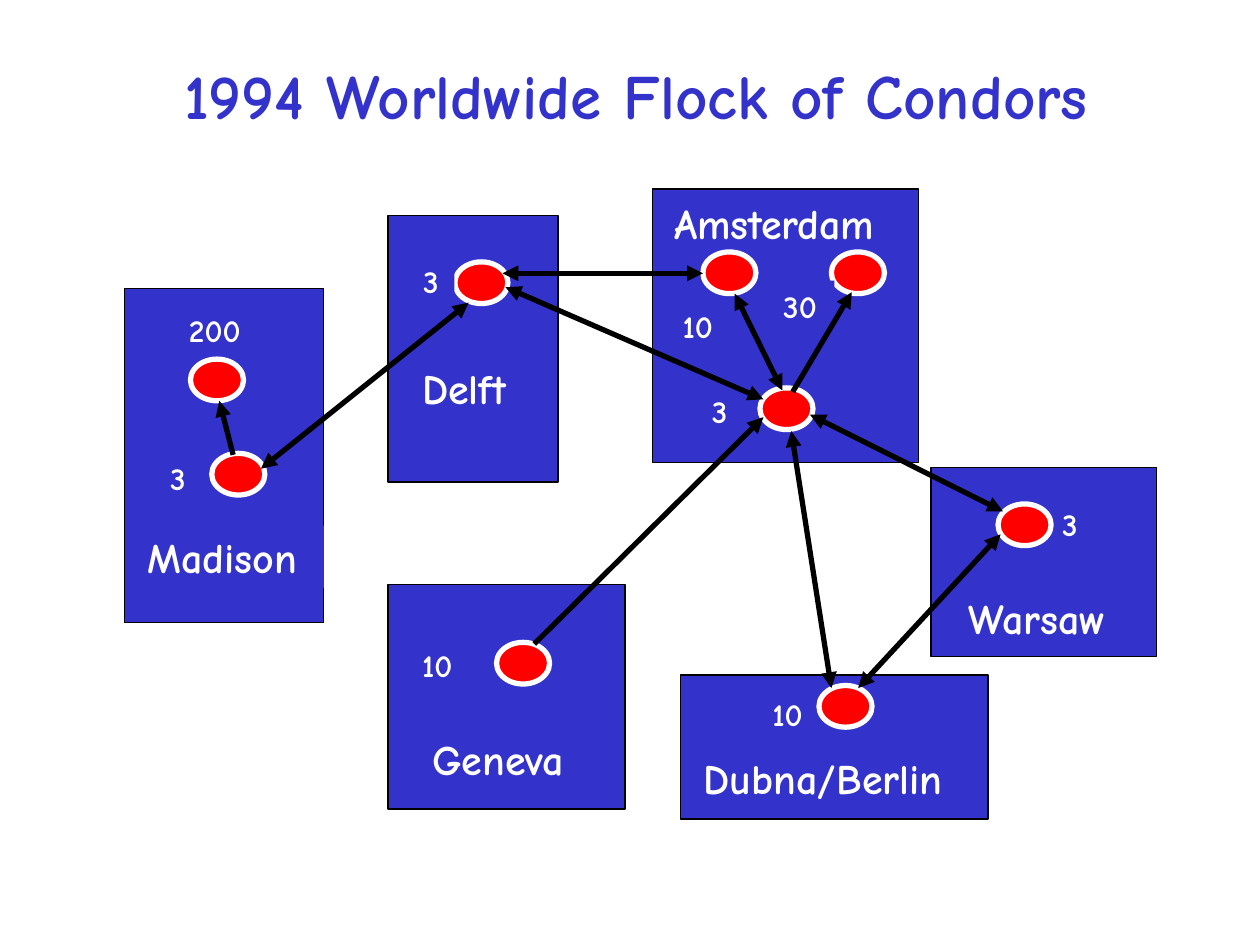
"""Build a slide mapping the 1994 worldwide flock of Condor pools."""
from dataclasses import dataclass

from lxml import etree
from pptx import Presentation
from pptx.dml.color import RGBColor
from pptx.enum.shapes import MSO_CONNECTOR, MSO_SHAPE
from pptx.enum.text import MSO_ANCHOR, PP_ALIGN
from pptx.oxml.ns import qn
from pptx.util import Cm, Pt

RECT, OVAL = MSO_SHAPE.RECTANGLE, MSO_SHAPE.OVAL
STRAIGHT = MSO_CONNECTOR.STRAIGHT
CENTER, MIDDLE = PP_ALIGN.CENTER, MSO_ANCHOR.MIDDLE
TITLE_ONLY = 5


@dataclass(frozen=True)
class Theme:
    font: str = "Comic Neue"
    blue: RGBColor = RGBColor(0x33, 0x33, 0xCC)
    red: RGBColor = RGBColor(0xFF, 0, 0)
    white: RGBColor = RGBColor(0xFF, 0xFF, 0xFF)
    black: RGBColor = RGBColor(0, 0, 0)
    title: int = 36
    name: int = 24
    count: int = 18


THEME = Theme()
MACHINE_SIZE = (1.07, 0.84)

SITES = [
    ("Dubna/Berlin", (13.72, 13.61, 6.2, 2.9), (13.94, 15.04, 5.79)),
    ("Amsterdam", (13.16, 3.81, 5.36, 5.51), (13.34, 3.86, 5.16)),
    ("Warsaw", (18.77, 9.42, 4.55, 3.81), (19.28, 11.81, 3.76)),
    ("Geneva", (7.82, 11.79, 4.78, 4.52), (8.46, 14.66, 3.38)),
    ("Delft", (7.82, 4.34, 3.43, 5.38), (8.26, 7.19, 2.69)),
    ("Madison", (2.51, 5.82, 4.01, 6.73), (2.72, 10.59, 3.81)),
]
COUNTS_BEHIND = [("10", 15.32, 13.89), ("3", 14.1, 7.77), ("3", 21.16, 10.06)]
COUNTS_IN_FRONT = [
    ("200", 3.56, 6.15), ("3", 3.18, 9.12), ("10", 8.26, 12.9),
    ("3", 8.28, 5.16), ("30", 15.54, 5.66), ("10", 13.51, 6.07),
]
MACHINES = [
    (3.84, 7.24), (4.27, 9.14), (9.17, 5.28),
    (14.17, 5.08), (16.76, 5.08), (15.32, 7.82),
    (20.12, 10.16), (16.51, 13.82), (10.01, 12.95),
]
ONE_WAY = [
    (4.7, 9.17, 4.42, 8.08),
    (10.77, 12.98, 15.39, 8.41),
    (15.98, 7.9, 17.17, 5.89),
]
TWO_WAY = [
    (5.26, 9.45, 9.45, 6.1),
    (10.19, 5.79, 15.39, 8.05),
    (10.13, 5.51, 14.17, 5.51),
    (14.81, 5.92, 15.77, 7.87),
    (15.95, 8.69, 16.76, 13.87),
    (17.3, 13.87, 20.17, 10.77),
    (16.33, 8.36, 20.22, 10.31),
]


def style_text(p, size, color):
    """Format every run of a paragraph."""
    for r in p.runs:
        r.font.name = THEME.font
        r.font.size = Pt(size)
        r.font.bold = True
        r.font.color.rgb = color


def add_title(s, text):
    """Fill and place the title placeholder."""
    sp = s.shapes.title
    sp.left, sp.top, sp.width, sp.height = map(Cm, (1.07, 0.64, 23.5, 2.54))
    tf = sp.text_frame
    tf.text = text
    tf.vertical_anchor = MIDDLE
    p = tf.paragraphs[0]
    p.alignment = CENTER
    style_text(p, THEME.title, THEME.blue)


def add_outlined(s, kind, box, fill, line, weight):
    """Add a filled shape with an outline."""
    sp = s.shapes.add_shape(kind, *map(Cm, box))
    sp.shadow.inherit = False
    sp.fill.solid()
    sp.fill.fore_color.rgb = fill
    sp.line.color.rgb = line
    sp.line.width = Pt(weight)


def add_label(s, text, box, size):
    """Add a one-line white label on blue."""
    sp = s.shapes.add_textbox(*map(Cm, box))
    sp.fill.solid()
    sp.fill.fore_color.rgb = THEME.blue
    tf = sp.text_frame
    tf.word_wrap = False
    tf.text = text
    style_text(tf.paragraphs[0], size, THEME.white)


def add_count(s, text, left, top):
    """Add a machine count in a box as wide as its digits need."""
    width = 0.48 + 0.4 * len(text)
    add_label(s, text, (left, top, width, 1.02), THEME.count)


def add_arrow(s, ends, two_way):
    """Add a thick arrow with one or two heads."""
    cx = s.shapes.add_connector(STRAIGHT, *map(Cm, ends))
    cx.line.color.rgb = THEME.black
    cx.line.width = Pt(3)
    ln = cx.line._get_or_add_ln()
    for tag in ("a:headEnd", "a:tailEnd") if two_way else ("a:tailEnd",):
        etree.SubElement(ln, qn(tag)).set("type", "triangle")
    etree.SubElement(cx._element.spPr, qn("a:effectLst"))


def main():
    """Build and save the slide."""
    prs = Presentation()
    prs.slide_width, prs.slide_height = Cm(25.4), Cm(19.05)
    s = prs.slides.add_slide(prs.slide_layouts[TITLE_ONLY])
    add_title(s, "1994 Worldwide Flock of Condors")
    for name, box, (left, top, width) in SITES:
        add_outlined(s, RECT, box, THEME.blue, THEME.black, 0.75)
        add_label(s, name, (left, top, width, 1.27), THEME.name)
    for count in COUNTS_BEHIND:
        add_count(s, *count)
    for position in MACHINES:
        add_outlined(s, OVAL, position + MACHINE_SIZE, THEME.red, THEME.white, 3)
    for count in COUNTS_IN_FRONT:
        add_count(s, *count)
    for arrows, two_way in ((ONE_WAY, False), (TWO_WAY, True)):
        for ends in arrows:
            add_arrow(s, ends, two_way)
    prs.save("out.pptx")


if __name__ == "__main__":
    main()
